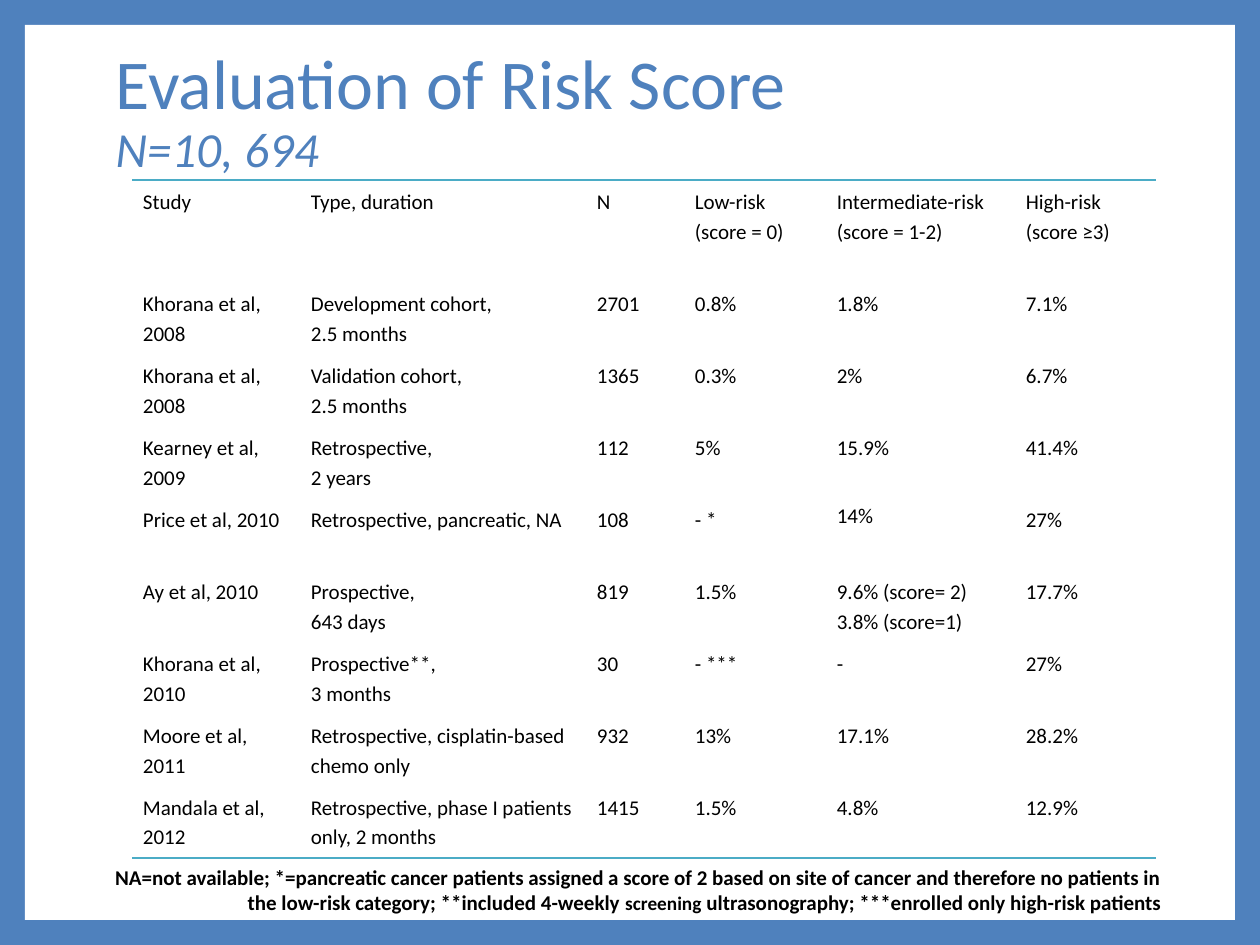
from lxml import etree
from pptx import Presentation
from pptx.dml.color import RGBColor
from pptx.enum import shapes, text
from pptx.oxml import ns
from pptx.util import Pt

PX = 914400 / 126
FONT = "Calibri"
COLORS = {"blue": "4F81BD", "white": "FFFFFF", "black": "000000", "rule": "4BACC6"}
COLUMNS = [168, 286, 98, 142, 189, 141]
HEADER_HEIGHT, ROW_HEIGHT = 102, 72
NO_STYLE = "{2D5ABB26-0587-4C30-8999-92F81FD0307C}"
STUDIES = [
    ["Study", "Type, duration", "N", "Low-risk\n(score = 0)",
     "Intermediate-risk\n(score = 1-2)", "High-risk\n(score ≥3)"],
    ["Khorana et al, 2008", "Development cohort,\n2.5 months", "2701", "0.8%", "1.8%", "7.1%"],
    ["Khorana et al, 2008", "Validation cohort,\n2.5 months", "1365", "0.3%", "2%", "6.7%"],
    ["Kearney et al, 2009", "Retrospective,\n2 years", "112", "5%", "15.9%", "41.4%"],
    ["Price et al, 2010", "Retrospective, pancreatic, NA", "108", "- *", "14%", "27%"],
    ["Ay et al, 2010", "Prospective,\n643 days", "819", "1.5%",
     "9.6% (score= 2)\n3.8% (score=1)", "17.7%"],
    ["Khorana et al, 2010", "Prospective**,\n3 months", "30", "- ***", "-", "27%"],
    ["Moore et al, 2011", "Retrospective, cisplatin-based chemo only", "932",
     "13%", "17.1%", "28.2%"],
    ["Mandala et al, 2012", "Retrospective, phase I patients only, 2 months", "1415",
     "1.5%", "4.8%", "12.9%"],
]
SINGLE_SPACED = (4, 4)  # row and column of the one cell without extra leading
FOOTNOTE = [
    ("NA=not available; *=pancreatic cancer patients assigned a score of 2 based on site of "
     "cancer and therefore no patients in the low-risk category; **included 4-weekly ", 12),
    ("screening", 11),
    (" ultrasonography; ***enrolled only high-risk patients", 12),
]


def px(n):
    return round(n * PX)


def rgb(name):
    return RGBColor.from_string(COLORS[name])


def format_run(r, size, color, bold=False, italic=False):
    f = r.font
    f.name, f.size, f.bold, f.italic = FONT, Pt(size), bold, italic
    f.color.rgb = rgb(color)


def size_breaks(p, size):
    """Give line breaks the size of the text they follow."""
    for br in p._p.findall(ns.qn("a:br")):
        etree.SubElement(br, ns.qn("a:rPr")).set("sz", str(size * 100))


def add_panel(slide, box):
    sp = slide.shapes.add_shape(shapes.MSO_SHAPE.RECTANGLE, *map(px, box))
    sp.shadow.inherit = False
    sp.fill.solid()
    sp.fill.fore_color.rgb = rgb("white")
    sp.line.fill.background()
    slide.shapes._spTree.insert(2, sp._element)  # behind the title


def fill_title(slide, box):
    sp = slide.shapes.title
    sp.left, sp.top, sp.width, sp.height = map(px, box)
    tf = sp.text_frame
    tf.word_wrap = True
    tf.auto_size = text.MSO_AUTO_SIZE.NONE
    tf.vertical_anchor = text.MSO_ANCHOR.MIDDLE
    p = tf.paragraphs[0]
    p.text = "Evaluation of Risk Score\nN=10, 694"
    p.alignment = text.PP_ALIGN.LEFT
    p.line_spacing = 0.9
    heading, count = p.runs
    format_run(heading, 40, "blue")
    format_run(count, 28, "blue", italic=True)
    size_breaks(p, 40)


def add_rule(cell, edge):
    """Draw one cell edge: lnT for the top, lnB for the bottom."""
    ln = etree.Element(ns.qn("a:" + edge), w=str(Pt(1)))
    fill = etree.SubElement(ln, ns.qn("a:solidFill"))
    etree.SubElement(fill, ns.qn("a:srgbClr"), val=COLORS["rule"])
    cell._tc.get_or_add_tcPr().insert(0, ln)


def add_studies(slide, left, top):
    height = HEADER_HEIGHT + ROW_HEIGHT * (len(STUDIES) - 1)
    frame = slide.shapes.add_table(len(STUDIES), len(COLUMNS), px(left), px(top),
                                   px(sum(COLUMNS)), px(height))
    table = frame.table
    table.first_row = table.horz_banding = False
    table._tbl.tblPr.find(ns.qn("a:tableStyleId")).text = NO_STYLE
    for column, width in zip(table.columns, COLUMNS):
        column.width = px(width)
    for i, values in enumerate(STUDIES):
        table.rows[i].height = px(ROW_HEIGHT if i else HEADER_HEIGHT)
        for j, value in enumerate(values):
            cell = table.cell(i, j)
            cell.fill.background()
            cell.margin_left = cell.margin_right = px(11)
            cell.margin_top = cell.margin_bottom = px(6)
            p = cell.text_frame.paragraphs[0]
            p.text = value
            if (i, j) != SINGLE_SPACED:
                p.line_spacing, p.space_after = 1.15, Pt(10)
            for r in p.runs:
                format_run(r, 12, "black")
            size_breaks(p, 12)
            if i == 0:
                add_rule(cell, "lnT")
            elif i == len(STUDIES) - 1:
                add_rule(cell, "lnB")


def add_footnote(slide, box):
    tf = slide.shapes.add_textbox(*map(px, box)).text_frame
    tf.word_wrap = True
    p = tf.paragraphs[0]
    p.alignment = text.PP_ALIGN.RIGHT
    # Hanging indent
    pPr = p._p.get_or_add_pPr()
    pPr.set("marL", str(px(48)))
    pPr.set("indent", str(px(-48)))
    for words, size in FOOTNOTE:
        r = p.add_run()
        r.text = words
        format_run(r, size, "black", bold=True)


def main():
    prs = Presentation()
    prs.slide_width, prs.slide_height = px(1260), px(945)
    slide = prs.slides.add_slide(prs.slide_layouts[5])
    slide.background.fill.solid()
    slide.background.fill.fore_color.rgb = rgb("blue")
    add_panel(slide, (25, 25, 1210, 895))
    fill_title(slide, (103, 10, 1004, 207))
    add_studies(slide, 132, 180)
    add_footnote(slide, (73, 858, 1101, 63))
    prs.save("out.pptx")


if __name__ == "__main__":
    main()
